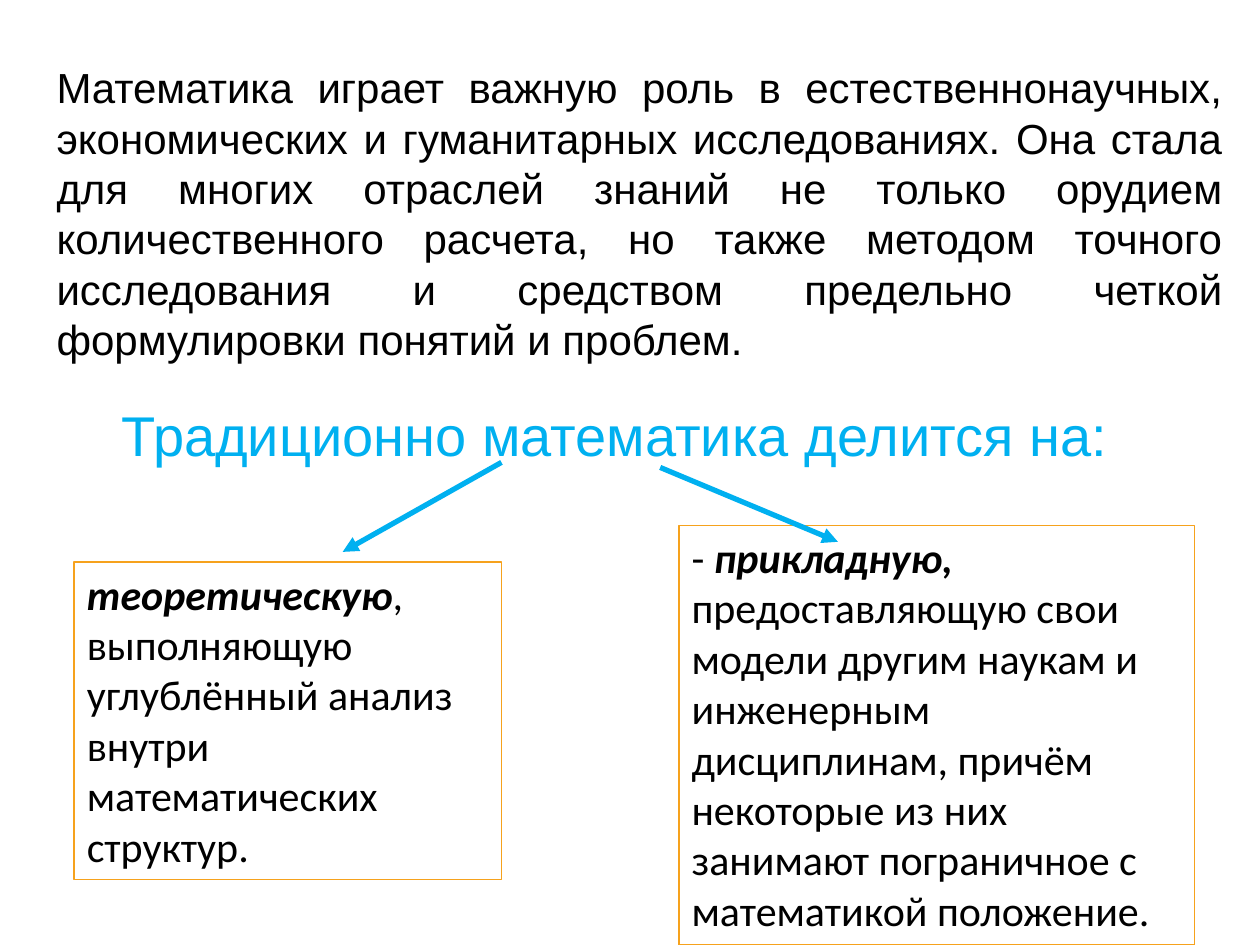
from dataclasses import dataclass

from lxml import etree
from pptx import Presentation
from pptx import util as u
from pptx.dml.color import RGBColor
from pptx.enum import shapes, text
from pptx.oxml.ns import qn

WIDTH, HEIGHT = u.Inches(10), u.Inches(7.5)


@dataclass(frozen=True)
class Theme:
    ink: RGBColor = RGBColor(0, 0, 0)
    paper: RGBColor = RGBColor(255, 255, 255)
    accent: RGBColor = RGBColor(0x00, 0xB0, 0xF0)
    frame: RGBColor = RGBColor(0xF6, 0xA2, 0x1D)
    sans: str = "Arial"
    card_font: str = "Calibri"
    body: int = 24
    heading: int = 32
    frame_width: int = 1
    arrow_width: int = 3


THEME = Theme()


def inches(*lengths):
    return [u.Inches(length) for length in lengths]


def write(shape, runs, font, size, color, align=text.PP_ALIGN.LEFT):
    """Fill a shape with one paragraph of (wording, emphasised) runs."""
    frame = shape.text_frame
    frame.word_wrap = True
    frame.vertical_anchor = text.MSO_ANCHOR.TOP
    frame.auto_size = text.MSO_AUTO_SIZE.SHAPE_TO_FIT_TEXT
    paragraph = frame.paragraphs[0]
    paragraph.alignment = align
    for wording, emphasised in runs:
        run = paragraph.add_run()
        run.text = wording
        run.font.name = font
        run.font.size = u.Pt(size)
        run.font.color.rgb = color
        run.font.bold = run.font.italic = emphasised


def add_statement(slide, box, wording, size, color, align):
    statement = slide.shapes.add_textbox(*inches(*box))
    write(statement, [(wording, False)], THEME.sans, size, color, align)


def add_branch(slide, box, runs):
    branch = slide.shapes.add_shape(shapes.MSO_SHAPE.RECTANGLE, *inches(*box))
    branch.shadow.inherit = False
    branch.fill.solid()
    branch.fill.fore_color.rgb = THEME.paper
    branch.line.color.rgb = THEME.frame
    branch.line.width = u.Pt(THEME.frame_width)
    write(branch, runs, THEME.card_font, THEME.body, THEME.ink)


def add_arrow(slide, start, end):
    arrow = slide.shapes.add_connector(
        shapes.MSO_CONNECTOR.STRAIGHT, *inches(*start, *end))
    arrow.line.color.rgb = THEME.accent
    arrow.line.width = u.Pt(THEME.arrow_width)
    # Arrowhead at the far end, no shadow
    etree.SubElement(arrow.line._get_or_add_ln(), qn("a:tailEnd"), type="triangle")
    etree.SubElement(arrow._element.spPr, qn("a:effectLst"))


def main():
    deck = Presentation()
    deck.slide_width, deck.slide_height = WIDTH, HEIGHT
    slide = deck.slides.add_slide(deck.slide_layouts[6])

    # Role of mathematics
    add_statement(
        slide, (0.35, 0.44, 9.45, 2.83),
        "Математика играет важную роль в естественнонаучных, экономических и "
        "гуманитарных исследованиях. Она стала для многих отраслей знаний не "
        "только орудием количественного расчета, но также методом точного "
        "исследования и средством предельно четкой формулировки понятий и проблем.",
        THEME.body, THEME.ink, text.PP_ALIGN.JUSTIFY)

    # Heading of the division
    add_statement(
        slide, (0.87, 3.13, 8.43, 0.64), "Традиционно математика делится на:",
        THEME.heading, THEME.accent, text.PP_ALIGN.LEFT)

    # Theoretical and applied branches
    add_branch(slide, (0.59, 4.46, 3.39, 2.52), [
        ("теоретическую", True),
        (", выполняющую углублённый анализ внутри математических структур.", False),
    ])
    add_branch(slide, (5.39, 4.17, 4.09, 3.33), [
        ("- ", False),
        ("прикладную,", True),
        (" предоставляющую свои модели другим наукам и инженерным дисциплинам, "
         "причём некоторые из них занимают пограничное с математикой положение.",
         False),
    ])

    # Arrows from the heading to each branch
    add_arrow(slide, (3.98, 3.67), (2.72, 4.38))
    add_arrow(slide, (5.24, 3.71), (6.65, 4.3))

    deck.save("out.pptx")


if __name__ == "__main__":
    main()
